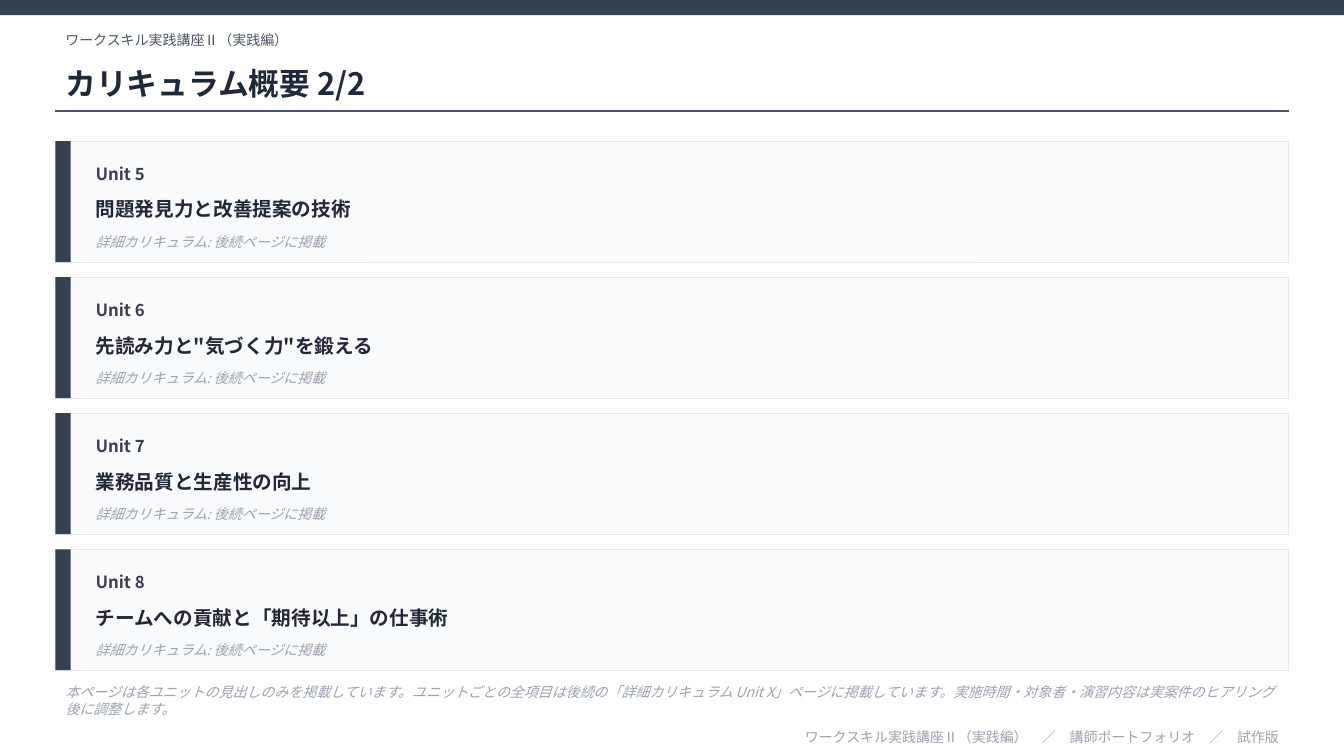
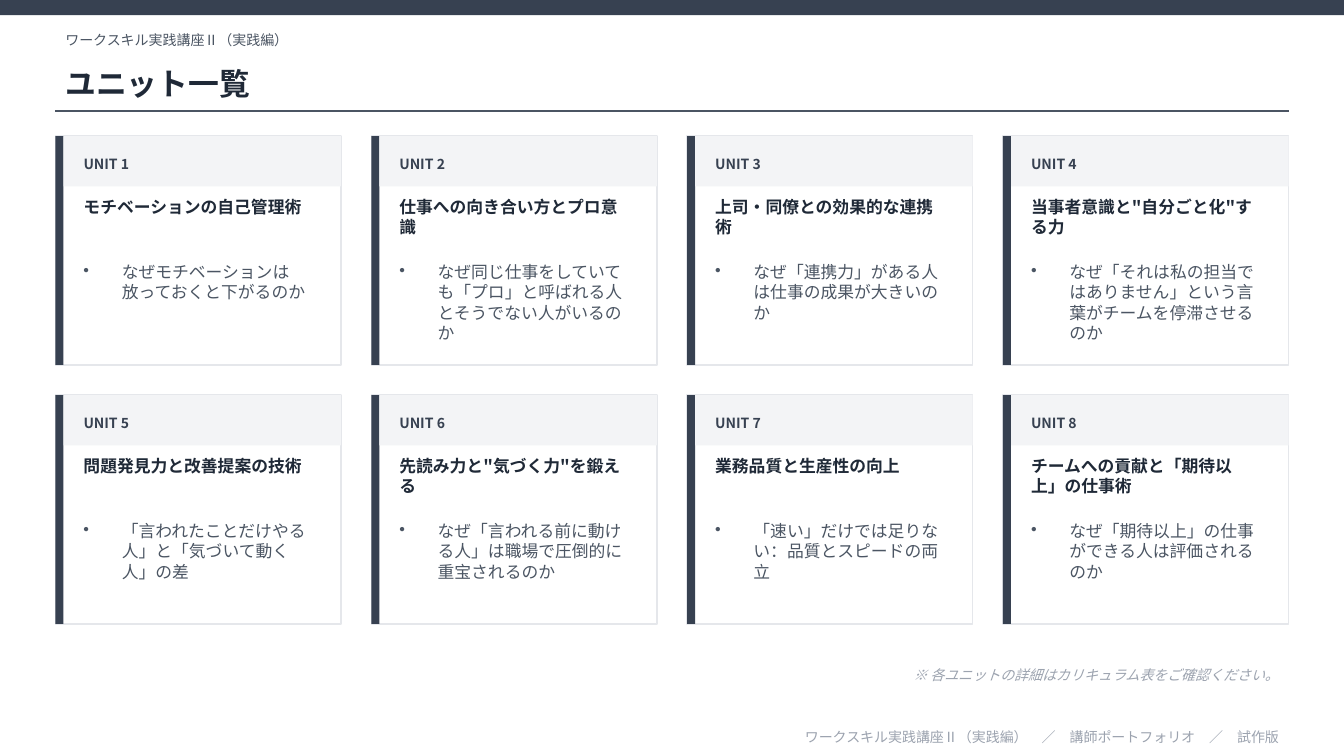
"""Build the curriculum outline and the unit overview of a work skills course."""
import dataclasses

import lxml.etree
import pptx
import pptx.dml.color
import pptx.enum.shapes
import pptx.enum.text
import pptx.oxml.ns
import pptx.util

Inches = pptx.util.Inches
Pt = pptx.util.Pt
ALIGN = pptx.enum.text.PP_ALIGN
ANCHOR = pptx.enum.text.MSO_ANCHOR


@dataclasses.dataclass(frozen=True)
class TextStyle:
    size: int
    color: str
    bold: bool = False
    italic: bool = False


@dataclasses.dataclass(frozen=True)
class Theme:
    font: str = "Noto Sans CJK JP"
    accent: str = "374151"
    rule: str = "4B5563"
    border: str = "E5E7EB"
    panel: str = "F9FAFB"
    card: str = "FFFFFF"
    card_header: str = "F3F4F6"
    course: TextStyle = TextStyle(10, "4B5563")
    title: TextStyle = TextStyle(22, "1F2937", bold=True)
    row_label: TextStyle = TextStyle(12, "374151", bold=True)
    row_heading: TextStyle = TextStyle(14, "1F2937", bold=True)
    card_label: TextStyle = TextStyle(10, "374151", bold=True)
    card_heading: TextStyle = TextStyle(12, "1F2937", bold=True)
    body: TextStyle = TextStyle(12, "4B5563")
    note: TextStyle = TextStyle(10, "9CA3AF", italic=True)
    footer: TextStyle = TextStyle(10, "9CA3AF")


def add_box(slide, left, top, width, height, fill, border_width=0):
    shape = slide.shapes.add_shape(
        pptx.enum.shapes.MSO_SHAPE.RECTANGLE,
        Inches(left), Inches(top), Inches(width), Inches(height))
    shape.shadow.inherit = False
    shape.fill.solid()
    shape.fill.fore_color.rgb = pptx.dml.color.RGBColor.from_string(fill)
    if border_width:
        shape.line.color.rgb = pptx.dml.color.RGBColor.from_string(theme.border)
        shape.line.width = Pt(border_width)
    else:
        shape.line.fill.background()


def add_text(slide, left, top, width, height, text, style,
             align=ALIGN.LEFT, anchor=ANCHOR.MIDDLE, bullet=False):
    text_frame = slide.shapes.add_textbox(
        Inches(left), Inches(top), Inches(width), Inches(height)).text_frame
    text_frame.word_wrap = True
    text_frame.vertical_anchor = anchor
    text_frame.text = text
    paragraph = text_frame.paragraphs[0]
    paragraph.alignment = align
    if bullet:
        properties = paragraph._p.get_or_add_pPr()
        properties.set("marL", str(Inches(0.38)))
        properties.set("indent", str(-Inches(0.38)))
        mark = lxml.etree.SubElement(properties, pptx.oxml.ns.qn("a:buChar"))
        mark.set("char", "•")
        paragraph.space_after = Pt(3)
    run = paragraph.runs[0]
    run.font.size = Pt(style.size)
    run.font.bold = style.bold
    run.font.italic = style.italic
    run.font.color.rgb = pptx.dml.color.RGBColor.from_string(style.color)
    run.font.name = theme.font
    east_asian = lxml.etree.SubElement(run._r.get_or_add_rPr(), pptx.oxml.ns.qn("a:ea"))
    east_asian.set("typeface", theme.font)


theme = Theme()
slide_width, slide_height = 13.33, 7.5
margin = 0.55
content_width = slide_width - 2 * margin

course_name = "ワークスキル実践講座Ⅱ（実践編）"
footer_text = "　／　".join([course_name, "講師ポートフォリオ", "試作版"])
units = [
    ("モチベーションの自己管理術", "なぜモチベーションは放っておくと下がるのか"),
    ("仕事への向き合い方とプロ意識",
     "なぜ同じ仕事をしていても「プロ」と呼ばれる人とそうでない人がいるのか"),
    ("上司・同僚との効果的な連携術", "なぜ「連携力」がある人は仕事の成果が大きいのか"),
    ('当事者意識と"自分ごと化"する力',
     "なぜ「それは私の担当ではありません」という言葉がチームを停滞させるのか"),
    ("問題発見力と改善提案の技術", "「言われたことだけやる人」と「気づいて動く人」の差"),
    ('先読み力と"気づく力"を鍛える',
     "なぜ「言われる前に動ける人」は職場で圧倒的に重宝されるのか"),
    ("業務品質と生産性の向上", "「速い」だけでは足りない：品質とスピードの両立"),
    ("チームへの貢献と「期待以上」の仕事術",
     "なぜ「期待以上」の仕事ができる人は評価されるのか"),
]

presentation = pptx.Presentation()
presentation.slide_width = Inches(slide_width)
presentation.slide_height = Inches(slide_height)
blank_layout = presentation.slide_layouts[6]

for title in ["カリキュラム概要 2/2", "ユニット一覧"]:
    slide = presentation.slides.add_slide(blank_layout)
    add_box(slide, 0, 0, slide_width, slide_height / 50, theme.accent)
    add_text(slide, margin, 0.25, content_width, 0.3, course_name, theme.course)
    add_text(slide, margin, 0.55, content_width, 0.55, title, theme.title)
    rule = slide.shapes.add_connector(
        pptx.enum.shapes.MSO_CONNECTOR.STRAIGHT,
        Inches(margin), Inches(1.1), Inches(margin + content_width), Inches(1.1))
    rule.line.color.rgb = pptx.dml.color.RGBColor.from_string(theme.rule)
    rule.line.width = Pt(1)
    lxml.etree.SubElement(rule._element.spPr, pptx.oxml.ns.qn("a:effectLst"))
    add_text(slide, margin, 7.2, content_width, 0.22, footer_text, theme.footer, ALIGN.RIGHT)

curriculum_slide, overview_slide = presentation.slides

row_height, row_gap = 1.2, 0.15
row_text_left = margin + 0.3
row_text_width = content_width - 0.5
first_unit = 5
for row, (heading, question) in enumerate(units[first_unit - 1:]):
    top = 1.4 + row * (row_height + row_gap)
    add_box(curriculum_slide, margin, top, content_width, row_height, theme.panel, 0.5)
    add_box(curriculum_slide, margin, top, 0.15, row_height, theme.accent)
    add_text(curriculum_slide, row_text_left, top + 0.12, 1.5, 0.4,
             f"Unit {first_unit + row}", theme.row_label)
    add_text(curriculum_slide, row_text_left, top + 0.45, row_text_width, 0.45,
             heading, theme.row_heading)
    add_text(curriculum_slide, row_text_left, top + 0.85, row_text_width, 0.3,
             "詳細カリキュラム: 後続ページに掲載", theme.note)
add_text(curriculum_slide, margin, 6.75, content_width, 0.4,
         "本ページは各ユニットの見出しのみを掲載しています。"
         "ユニットごとの全項目は後続の「詳細カリキュラム Unit X」ページに掲載しています。"
         "実施時間・対象者・演習内容は実案件のヒアリング後に調整します。", theme.note)

columns, card_gap, card_height, stripe = 4, 0.3, 2.27, 0.08
card_width = (content_width - (columns - 1) * card_gap) / columns
card_text_width = card_width - 0.36
for index, (heading, question) in enumerate(units):
    row, column = divmod(index, columns)
    left = margin + column * (card_width + card_gap)
    top = 1.35 + row * (card_height + card_gap)
    text_left = left + stripe + 0.1
    add_box(overview_slide, left, top, card_width, card_height, theme.card, 1)
    add_box(overview_slide, left, top, stripe, card_height, theme.accent)
    add_box(overview_slide, left + stripe, top, card_width - stripe, 0.5, theme.card_header)
    add_text(overview_slide, text_left, top + 0.08, 0.95, 0.4,
             f"UNIT {index + 1}", theme.card_label)
    add_text(overview_slide, text_left, top + 0.55, card_text_width, 0.6,
             heading, theme.card_heading, anchor=ANCHOR.TOP)
    add_text(overview_slide, text_left, top + 1.2, card_text_width, 0.97,
             question, theme.body, anchor=ANCHOR.TOP, bullet=True)
add_text(overview_slide, margin, 6.55, content_width, 0.3,
         "※ 各ユニットの詳細はカリキュラム表をご確認ください。", theme.note, ALIGN.RIGHT)

presentation.save("out.pptx")
